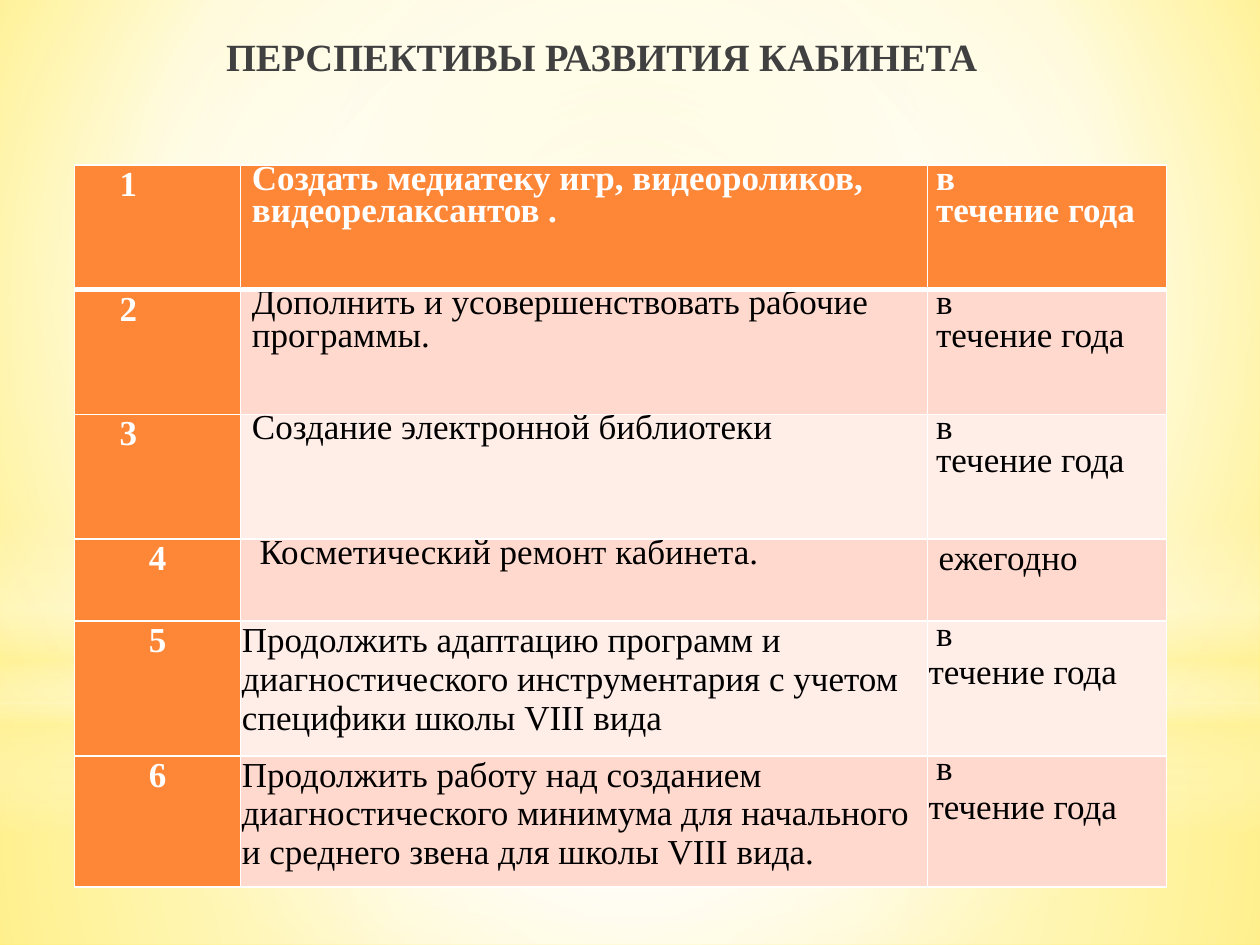
from lxml.etree import SubElement
from pptx import Presentation
from pptx.dml.color import RGBColor
from pptx.enum.shapes import MSO_SHAPE
from pptx.enum.text import MSO_ANCHOR, PP_ALIGN
from pptx.oxml.ns import qn
from pptx.util import Inches, Pt

FONT = "Times New Roman"
COLORS = {
    "white": "FFFFFF", "black": "000000", "title": "404040",
    "orange": "FE8637", "pink": "FFD9CE", "pale": "FFEDE8",
    "cream": "FFF39D", "lemon": "FFF18D", "yellow": "FFE94E",
}
LEFT, CENTER, JUSTIFY = PP_ALIGN.LEFT, PP_ALIGN.CENTER, PP_ALIGN.JUSTIFY
COLUMNS = [1.32, 5.45, 1.9]
ROWS = [0.99, 0.99, 0.99, 0.65, 1.07, 1.04]


def line(text, indent=0, align=LEFT, tight=True):
    """Describe one paragraph of a cell; tight ones have exact line spacing."""
    return text, indent, align, tight


def loose(text, indent=0, align=LEFT):
    return line(text, indent, align, tight=False)


IN_COURSE = line("в", 0.06, JUSTIFY)
YEAR = [IN_COURSE, line("течение года", 0.06, JUSTIFY)]
YEAR_LOOSE = [IN_COURSE, loose("течение года")]
PLAN = [
    (line("Создать медиатеку игр, видеороликов, видеорелаксантов .", 0.08), YEAR),
    (line("Дополнить и усовершенствовать рабочие программы.", 0.08), YEAR),
    (line("Создание электронной библиотеки", 0.08), YEAR),
    (line("Косметический ремонт кабинета.", 0.14, JUSTIFY), [loose("ежегодно", 0.08)]),
    (loose("Продолжить адаптацию программ и диагностического инструментария "
           "с учетом специфики школы VIII вида"), YEAR_LOOSE),
    (loose("Продолжить работу над созданием диагностического минимума для "
           "начального и среднего звена для школы VIII вида."), YEAR_LOOSE),
]


def rgb(name):
    return RGBColor.from_string(COLORS[name])


def set_gradient(holder, stops, center=None, angle=0):
    """Swap the solid fill in holder for a gradient of (place, colour, alpha)."""
    solid = holder.find(qn("a:solidFill"))
    grad = holder.makeelement(qn("a:gradFill"), {"rotWithShape": "1"})
    gs_list = SubElement(grad, qn("a:gsLst"))
    for place, color, alpha in stops:
        gs = SubElement(gs_list, qn("a:gs"), pos=str(place * 1000))
        clr = SubElement(gs, qn("a:srgbClr"), val=COLORS[color])
        if alpha < 100:
            SubElement(clr, qn("a:alpha"), val=str(alpha * 1000))
    if center:
        circle = SubElement(grad, qn("a:path"), path="circle")
        sides = {k: str(v * 1000) for k, v in zip("ltrb", center)}
        SubElement(circle, qn("a:fillToRect"), sides)
    else:
        SubElement(grad, qn("a:lin"), ang=str(angle * 60000), scaled="0")
    holder.replace(solid, grad)


def add_glow(s, kind, top, height, stops, center=(50, 50, 50, 50), angle=0):
    sp = s.shapes.add_shape(kind, 0, Inches(top), Inches(10), Inches(height))
    sp.shadow.inherit = False
    sp.line.fill.background()
    sp.fill.solid()
    set_gradient(sp.element.spPr, stops, center, angle)


def add_background(s):
    s.background.fill.solid()
    set_gradient(s.element.find(".//" + qn("p:bgPr")),
                 [(0, "lemon", 100), (60, "white", 100), (100, "yellow", 100)],
                 (20, 10, 20, 60))
    rect = MSO_SHAPE.RECTANGLE
    add_glow(s, rect, 5.58, 1.92,
             [(0, "white", 91), (37, "white", 76), (100, "cream", 79)])
    add_glow(s, rect, 0, 5.58,
             [(0, "white", 89), (48, "white", 62), (100, "cream", 79)])
    add_glow(s, rect, 4.12, 2.5,
             [(0, "white", 0), (29, "white", 30), (45, "cream", 40),
              (55, "white", 26), (65, "cream", 60), (100, "white", 0)],
             center=None, angle=90)
    add_glow(s, MSO_SHAPE.OVAL, 1.75, 5.58, [(0, "white", 100), (56, "white", 0)])


def write(p, text, size, color, bold, indent, align):
    p.alignment = align
    pPr = p._p.get_or_add_pPr()
    pPr.set("marL", str(Inches(indent)))
    pPr.set("indent", "0")
    r = p.add_run()
    r.text = text
    r.font.name = FONT
    r.font.size = Pt(size)
    r.font.bold = bold
    r.font.color.rgb = rgb(color)


def add_title(s, text):
    title = s.shapes.title
    title.left, title.top = Inches(1.25), Inches(0.21)
    title.width, title.height = Inches(7), Inches(0.87)
    s.shapes.element.append(title.element)  # bring in front of the glows
    tf = title.text_frame
    tf.word_wrap = True
    tf.vertical_anchor = MSO_ANCHOR.TOP
    write(tf.paragraphs[0], text, 22, "title", True, 0.05, CENTER)


def set_borders(cell, top, bottom):
    tcPr = cell._tc.get_or_add_tcPr()
    for side, width in (("L", 1), ("R", 1), ("T", top), ("B", bottom)):
        ln = SubElement(tcPr, qn("a:ln" + side), w=str(Pt(width)))
        fill = SubElement(ln, qn("a:solidFill"))
        SubElement(fill, qn("a:srgbClr"), val=COLORS["white"])


def fill_cell(cell, lines, fill, color, bold, row):
    cell.margin_left = cell.margin_right = Inches(0.01)
    cell.margin_top = cell.margin_bottom = 0
    cell.vertical_anchor = MSO_ANCHOR.TOP
    set_borders(cell, 3 if row == 1 else 1, 3 if row == 0 else 1)
    cell.fill.solid()
    cell.fill.fore_color.rgb = rgb(fill)
    tf = cell.text_frame
    for i, (text, indent, align, tight) in enumerate(lines):
        p = tf.add_paragraph() if i else tf.paragraphs[0]
        write(p, text, 20, color, bold, indent, align)
        if tight:
            p.line_spacing = Pt(18.6)


def add_plan(s):
    frame = s.shapes.add_table(len(ROWS), len(COLUMNS), Inches(0.59), Inches(1.31),
                               Inches(sum(COLUMNS)), Inches(sum(ROWS)))
    table = frame.table
    for column, width in zip(table.columns, COLUMNS):
        column.width = Inches(width)
    for row, height in zip(table.rows, ROWS):
        row.height = Inches(height)
    for i, (task, when) in enumerate(PLAN):
        n = str(i + 1)
        number = loose(n, 0.35) if i < 3 else loose(n, align=CENTER)
        for j, lines in enumerate(([number], [task], when)):
            strong = i == 0 or j == 0
            band = "pink" if i % 2 else "pale"
            fill_cell(table.cell(i, j), lines, "orange" if strong else band,
                      "white" if strong else "black", strong, i)


def main():
    prs = Presentation()
    prs.slide_width, prs.slide_height = Inches(10), Inches(7.5)
    s = prs.slides.add_slide(prs.slide_layouts[5])
    add_background(s)
    add_title(s, "ПЕРСПЕКТИВЫ РАЗВИТИЯ КАБИНЕТА")
    add_plan(s)
    prs.save("out.pptx")


if __name__ == "__main__":
    main()
